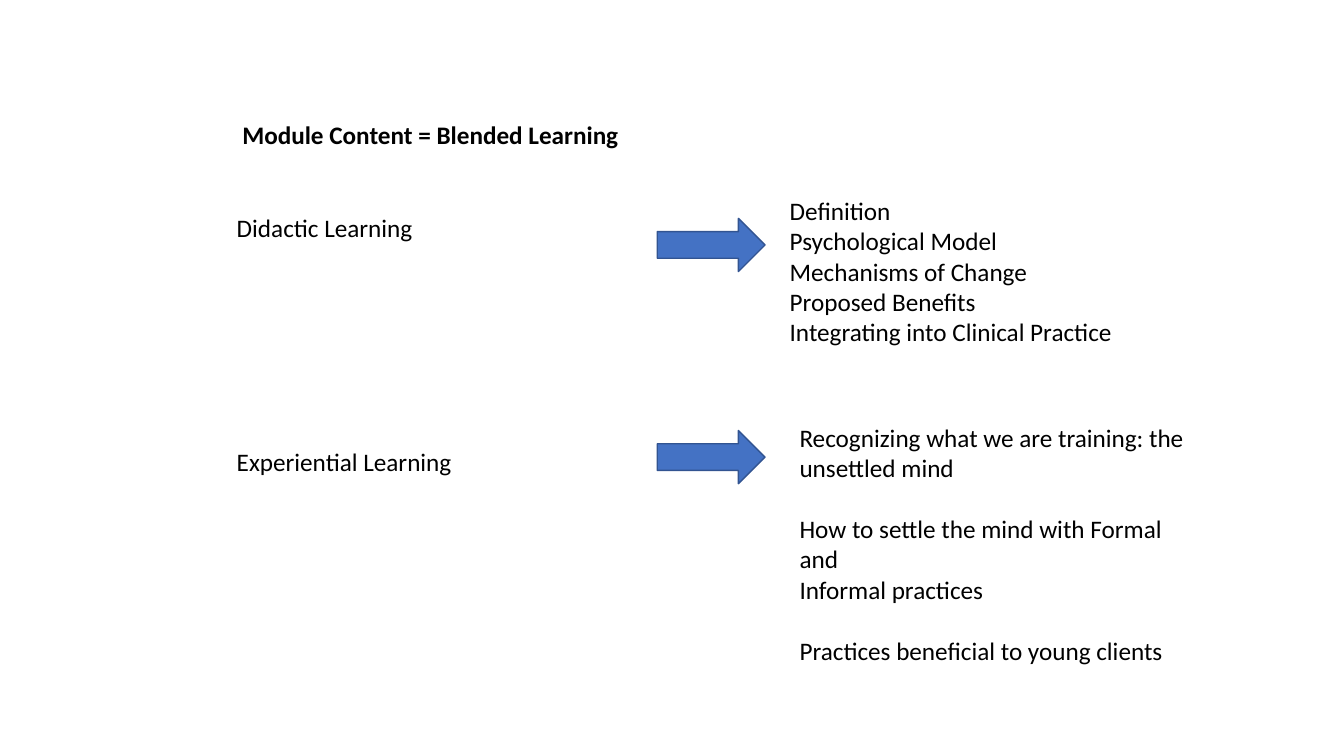
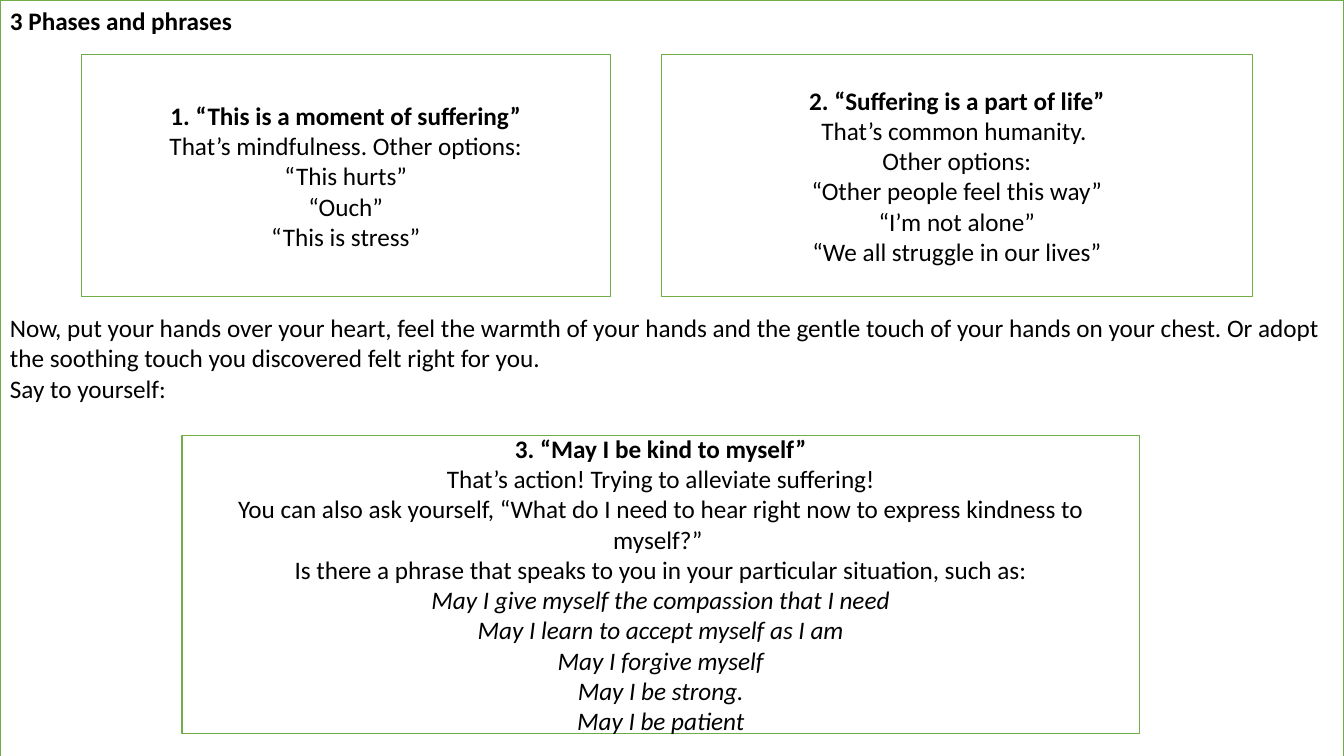
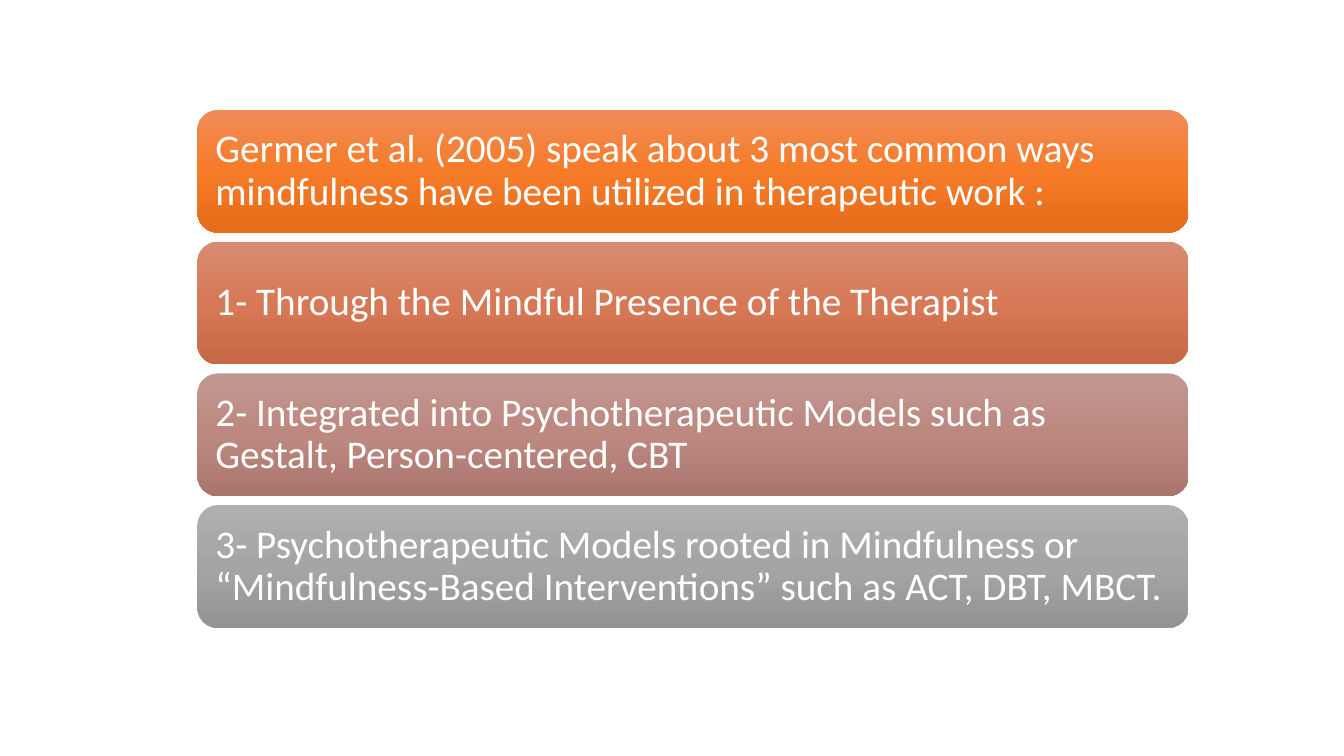
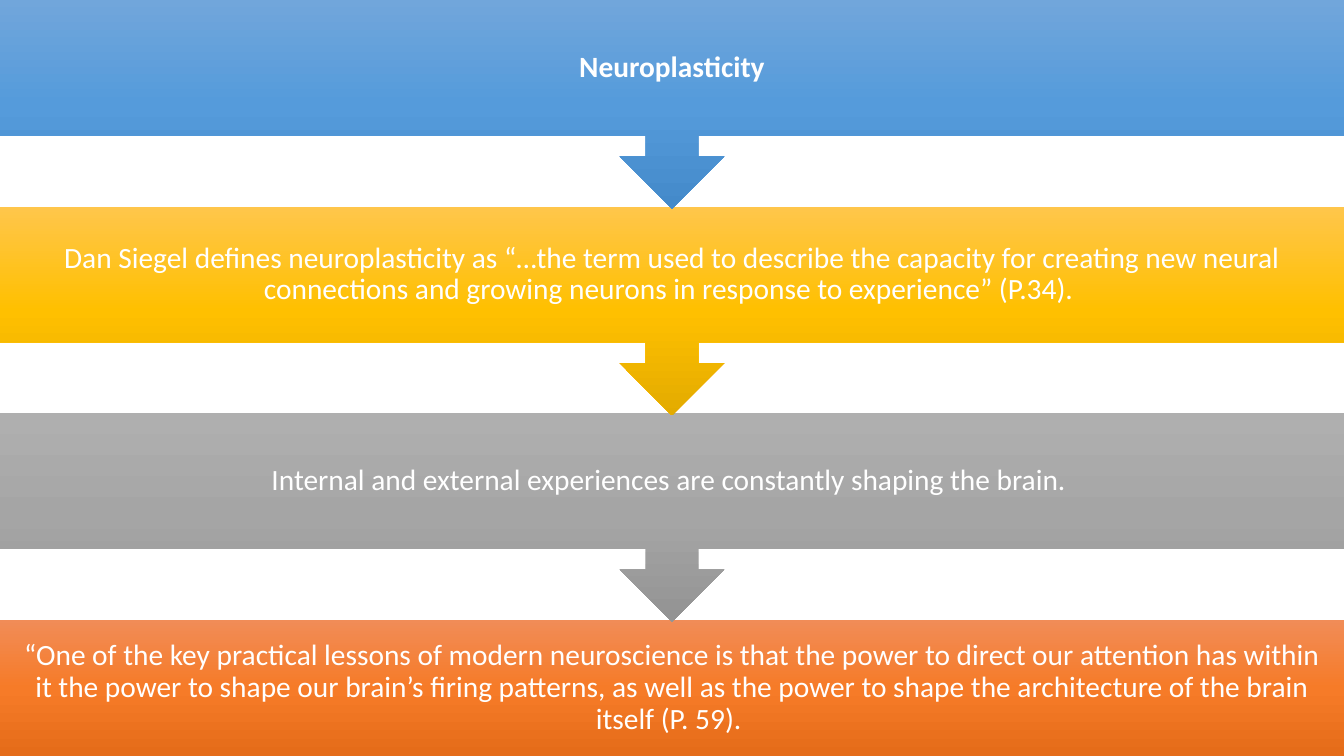
from copy import deepcopy

from pptx import Presentation
from pptx.dml.color import RGBColor
from pptx.enum.shapes import MSO_SHAPE
from pptx.enum.text import MSO_ANCHOR, PP_ALIGN
from pptx.oxml.ns import qn
from pptx.util import Pt

LEFT, CENTER = PP_ALIGN.LEFT, PP_ALIGN.CENTER
TOP, MIDDLE = MSO_ANCHOR.TOP, MSO_ANCHOR.MIDDLE
RECT, ROUND = MSO_SHAPE.RECTANGLE, MSO_SHAPE.ROUNDED_RECTANGLE
ARROW, CALLOUT = MSO_SHAPE.RIGHT_ARROW, MSO_SHAPE.DOWN_ARROW_CALLOUT
PROCESS = MSO_SHAPE.FLOWCHART_PROCESS

WIDE, HIGH = 960, 540
FONT, BODY, LINE = "Calibri", 18, 22
BLACK, WHITE = "000000", "FFFFFF"
BLUE, NAVY, GREEN = "4472C4", "325491", "70AD47"
ORANGE = ("F18C57", "F67B28", "E56C19")
CORAL = ("D78B72", "D77956", "C66846")
ROSE = ("C19791", "BC8880", "AA766E")
GREY = ("AFAFAF", "A5A5A5", "939393")
GOLD = ("FFC64B", "FFC000", "E3AB00")
SKY = ("71A6DB", "559BDB", "448ACA")

STAGES = [
    ((162, 136, 702, 138), "Didactic Learning", (12, 20, 395),
     ["Definition", "Psychological Model", "Mechanisms of Change",
      "Proposed Benefits", "Integrating into Clinical Practice"], {}),
    ((162, 298, 692, 225), "Experiential Learning", (17, 9.5, 402),
     ["Recognizing what we are training: the unsettled mind",
      "How to settle the mind with Formal and", "Informal practices",
      "Practices beneficial to young clients"], {1: LINE, 3: LINE}),
]
INTRO = [
    "3 Phases and phrases",
    "Now, put your hands over your heart, feel the warmth of your hands and "
    "the gentle touch of your hands on your chest. Or adopt the soothing "
    "touch you discovered felt right for you.",
    "Say to yourself:",
]
PHASES = [
    ((472.5, 39, 422, 173), 6,
     ["2. “Suffering is a part of life”", "That’s common humanity. ",
      "Other options:", "“Other people feel this way”", "“I’m not alone”",
      "“We all struggle in our lives”"]),
    ((58, 39, 378, 173), 5,
     ["1. “This is a moment of suffering”",
      "That’s mindfulness. Other options:", "“This hurts”", "“Ouch”",
      "“This is stress”"]),
    ((130, 311, 684, 213), 4,
     ["3. “May I be kind to myself”",
      "That’s action! Trying to alleviate suffering!",
      "You can also ask yourself, “What do I need to hear right now to "
      "express kindness to myself?” ",
      "Is there a phrase that speaks to you in your particular situation, "
      "such as:",
      "May I give myself the compassion that I need",
      "May I learn to accept myself as I am", "May I forgive myself",
      "May I be strong.", "May I be patient"]),
]
WAYS = [
    ("Germer et al. (2005) speak about 3 most common ways mindfulness have "
     "been utilized in therapeutic work :", ORANGE),
    ("1- Through the Mindful Presence of the Therapist", CORAL),
    ("2- Integrated into Psychotherapeutic Models such as Gestalt, "
     "Person-centered, CBT", ROSE),
    ("3- Psychotherapeutic Models rooted in Mindfulness or "
     "“Mindfulness-Based Interventions” such as ACT, DBT, MBCT.", GREY),
]
BANDS = [
    ("Neuroplasticity", SKY),
    ("Dan Siegel defines neuroplasticity as “…the term used to describe the "
     "capacity for creating new neural connections and growing neurons in "
     "response to experience” (P.34). ", GOLD),
    ("Internal and external experiences are constantly shaping the brain. ",
     GREY),
    ("“One of the key practical lessons of modern neuroscience is that the "
     "power to direct our attention has within it the power to shape our "
     "brain’s firing patterns, as well as the power to shape the "
     "architecture of the brain itself (P. 59). ", ORANGE),
]


def tint(code):
    """Turn a hex string into a colour."""
    return RGBColor.from_string(code)


def blend(shape, hues):
    """Fill a shape from top to bottom with evenly spaced hues."""
    fill = shape.fill
    fill.gradient()
    fill.gradient_angle = 270
    stops = shape._element.spPr.find(qn("a:gradFill")).find(qn("a:gsLst"))
    while len(stops) < len(hues):
        stops.append(deepcopy(stops[0]))
    for i, (stop, hue) in enumerate(zip(fill.gradient_stops, hues)):
        stop.position = i / (len(hues) - 1)
        stop.color.rgb = tint(hue)


def shape(slide, kind, box, fill, line=None):
    """Add a flat preset shape with a plain or blended fill."""
    item = slide.shapes.add_shape(kind, *map(Pt, box))
    item.shadow.inherit = False
    if isinstance(fill, tuple):
        blend(item, fill)
    else:
        item.fill.solid()
        item.fill.fore_color.rgb = tint(fill)
    if line:
        item.line.color.rgb = tint(line)
        item.line.width = Pt(1)
    else:
        item.line.fill.background()
    return item


def write(item, lines, size=BODY, hue=BLACK, align=LEFT, anchor=TOP,
          bold=0, slant=None, gaps=None, inset=None, pitch=None):
    """Set lines of text, the first ones bold, those from slant on italic."""
    frame = item.text_frame
    frame.word_wrap = True
    frame.vertical_anchor = anchor
    if inset is not None:
        frame.margin_left = frame.margin_right = Pt(inset)
        frame.margin_top = frame.margin_bottom = Pt(inset)
    frame.text = "\n".join(lines)
    for i, para in enumerate(frame.paragraphs):
        para.alignment = align
        if gaps and i in gaps:
            para.space_before = Pt(gaps[i])
        if pitch:
            para.line_spacing = pitch
        for run in para.runs:
            font = run.font
            font.name, font.size = FONT, Pt(size)
            font.color.rgb = tint(hue)
            font.bold = i < bold
            font.italic = slant is not None and i >= slant


def label(slide, box, lines, **style):
    """Add a text box."""
    write(slide.shapes.add_textbox(*map(Pt, box)), lines, **style)


def stage(slide, box, name, drops, lines, gaps):
    """Place a name, an arrow and a list side by side in a box."""
    x, y, w, h = box
    name_y, arrow_y, list_x = drops
    label(slide, (x, y + name_y, 300, 29), [name])
    shape(slide, ARROW, (x + 307.5, y + arrow_y, 77, 38), BLUE, NAVY)
    label(slide, (x + list_x, y, w - list_x, h), lines, gaps=gaps)


def phase(slide, box, slant, lines):
    """Place a green outlined box of centred phrases."""
    item = shape(slide, PROCESS, box, WHITE, GREEN)
    write(item, lines, align=CENTER, anchor=MIDDLE, bold=1, slant=slant)


def stack(slide, box, rows, gap):
    """Stack rounded bars of equal height in a box."""
    x, y, w, h = box
    tall = (h - gap * (len(rows) - 1)) / len(rows)
    for i, (text, hues) in enumerate(rows):
        bar = shape(slide, ROUND, (x, y + i * (tall + gap), w, tall), hues)
        write(bar, [text], 28, WHITE, anchor=MIDDLE, inset=8.64, pitch=0.9)


def flow(slide, box, rows, last):
    """Stack bands that point down to the next, the last one plain."""
    x, y, w, h = box
    step = (h - last) / (len(rows) - 1)
    for i, (text, hues) in reversed(list(enumerate(rows))):
        end = i == len(rows) - 1
        kind, tall = (RECT, last) if end else (CALLOUT, step + 1.44)
        band = shape(slide, kind, (x, y + i * step, w, tall), hues)
        write(band, [text], 21, WHITE, CENTER, MIDDLE, bold=int(i == 0),
              inset=11.5, pitch=0.9)


def main():
    """Build and save the four slides."""
    deck = Presentation()
    deck.slide_width, deck.slide_height = Pt(WIDE), Pt(HIGH)
    blank = deck.slide_layouts[6]
    module, phrases, ways, brain = (
        deck.slides.add_slide(blank) for _ in range(4))

    label(module, (166, 82, 737, 29), ["Module Content = Blended Learning"],
          bold=1)
    for row in STAGES:
        stage(module, *row)

    page = shape(phrases, RECT, (0, 0, WIDE, 574.5), WHITE, GREEN)
    write(page, INTRO, bold=1, gaps={1: 9 * LINE})
    for row in PHASES:
        phase(phrases, *row)

    stack(ways, (141, 78.5, 708, 370), WAYS, 6.4)
    flow(brain, (0, 0, WIDE, HIGH), BANDS, 97.2)
    deck.save("out.pptx")


if __name__ == "__main__":
    main()
